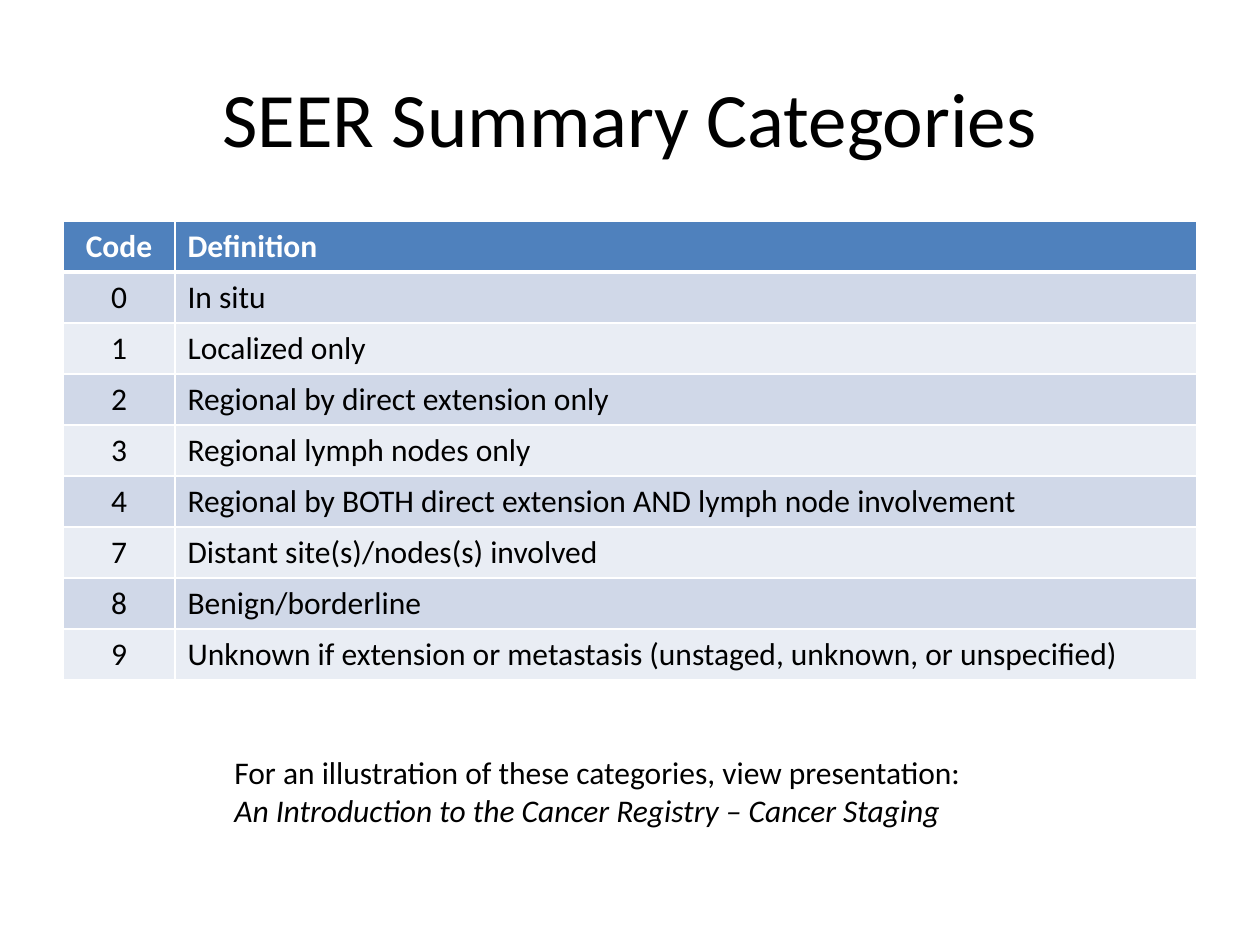
import pptx
import pptx.dml.color
import pptx.enum.text
import pptx.oxml
import pptx.oxml.ns
import pptx.util

RGBColor = pptx.dml.color.RGBColor
BLACK = RGBColor(0x00, 0x00, 0x00)
WHITE = RGBColor(0xFF, 0xFF, 0xFF)
HEADER_BLUE = RGBColor(0x4F, 0x81, 0xBD)
BAND_DARK = RGBColor(0xD0, 0xD8, 0xE8)
BAND_LIGHT = RGBColor(0xE9, 0xED, 0xF4)

CENTER = pptx.enum.text.PP_ALIGN.CENTER
LEFT = pptx.enum.text.PP_ALIGN.LEFT
MIDDLE = pptx.enum.text.MSO_ANCHOR.MIDDLE
TOP = pptx.enum.text.MSO_ANCHOR.TOP

FONT = "Calibri"
PX_PER_INCH = 126
COLUMN_WIDTHS = (112, 1022)
ROW_HEIGHT = 51

CATEGORIES = [
    ("Code", "Definition"),
    ("0", "In situ"),
    ("1", "Localized only"),
    ("2", "Regional by direct extension only"),
    ("3", "Regional lymph nodes only"),
    ("4", "Regional by BOTH direct extension AND lymph node involvement"),
    ("7", "Distant site(s)/nodes(s) involved"),
    ("8", "Benign/borderline"),
    ("9", "Unknown if extension or metastasis (unstaged, unknown, or unspecified)"),
]


def px(length):
    return pptx.util.Emu(round(length * 914400 / PX_PER_INCH))


def add_run(paragraph, text, size, color=BLACK, bold=False, italic=False):
    run = paragraph.add_run()
    run.text = text
    run.font.name = FONT
    run.font.size = pptx.util.Pt(size)
    run.font.color.rgb = color
    run.font.bold = bold
    run.font.italic = italic


def add_text_box(slide, left, top, width, height, anchor=TOP, align=LEFT):
    """Add a wrapping text box and return its empty paragraph."""
    box = slide.shapes.add_textbox(px(left), px(top), px(width), px(height))
    box.text_frame.word_wrap = True
    box.text_frame.vertical_anchor = anchor
    paragraph = box.text_frame.paragraphs[0]
    paragraph.alignment = align
    return paragraph


def set_borders(cell, top=1, bottom=1):
    """Draw white cell borders; widths are in points."""
    properties = cell._tc.get_or_add_tcPr()
    for side, width in (("L", 1), ("R", 1), ("T", top), ("B", bottom)):
        properties.append(pptx.oxml.parse_xml(
            f'<a:ln{side} {pptx.oxml.ns.nsdecls("a")} w="{pptx.util.Pt(width)}">'
            f'<a:solidFill><a:srgbClr val="{WHITE}"/></a:solidFill></a:ln{side}>'))


def add_category_table(slide, left, top):
    frame = slide.shapes.add_table(
        len(CATEGORIES), len(COLUMN_WIDTHS), px(left), px(top),
        px(sum(COLUMN_WIDTHS)), px(ROW_HEIGHT * len(CATEGORIES)))
    table = frame.table
    for column, width in zip(table.columns, COLUMN_WIDTHS):
        column.width = px(width)

    for row_index, texts in enumerate(CATEGORIES):
        table.rows[row_index].height = px(ROW_HEIGHT)
        is_header = row_index == 0
        band = BAND_DARK if row_index % 2 else BAND_LIGHT
        for column_index, text in enumerate(texts):
            cell = table.cell(row_index, column_index)
            # A thicker rule separates the header from the body
            set_borders(cell, top=3 if row_index == 1 else 1,
                        bottom=3 if is_header else 1)
            cell.fill.solid()
            cell.fill.fore_color.rgb = HEADER_BLUE if is_header else band
            paragraph = cell.text_frame.paragraphs[0]
            paragraph.alignment = CENTER if column_index == 0 else LEFT
            add_run(paragraph, text, 18, WHITE if is_header else BLACK, bold=is_header)


def main():
    presentation = pptx.Presentation()
    presentation.slide_width = px(1260)
    presentation.slide_height = px(945)
    slide = presentation.slides.add_slide(presentation.slide_layouts[6])

    # Title
    title = add_text_box(slide, 63, 38, 1134, 158, MIDDLE, CENTER)
    add_run(title, "SEER Summary Categories", 44)

    # Codes and definitions
    add_category_table(slide, 63, 221)

    # Reference note
    note = add_text_box(slide, 222, 747, 781, 89)
    add_run(note, "For an illustration of these categories, view presentation: ", 18)
    add_run(note, "An Introduction to the Cancer Registry – Cancer Staging", 18, italic=True)

    presentation.save("out.pptx")


if __name__ == "__main__":
    main()
